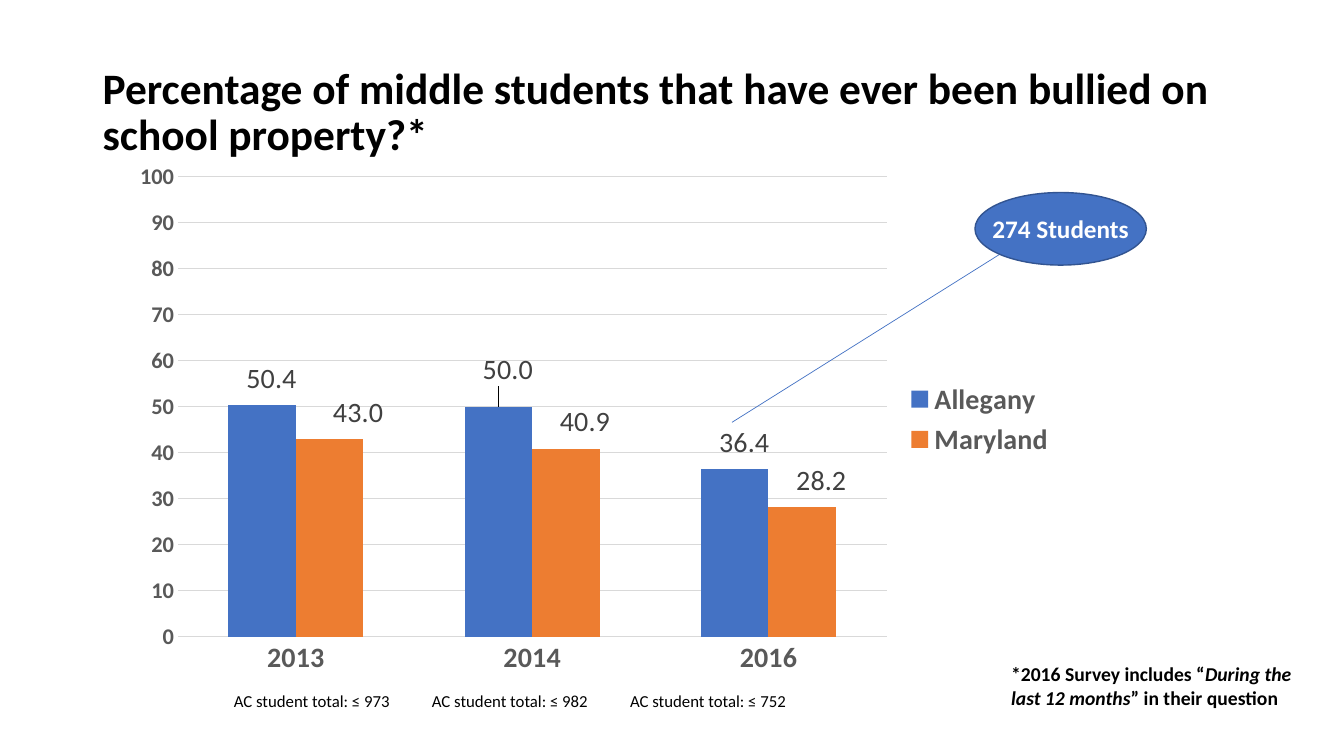
from lxml import etree
from pptx import Presentation, util as u
from pptx.chart.data import CategoryChartData
from pptx.dml.color import RGBColor
from pptx.enum import chart as ch, shapes, text
from pptx.oxml.ns import qn

# Content
TITLE = "Percentage of middle students that have ever been bullied on school property?*"
FOOTNOTE = [("*2016 Survey includes “", False), ("During the last 12 months", True),
            ("” in their question", False)]
CALLOUT = "274 Students"
YEARS = ["2013", "2014", "2016"]
TOTALS = [973, 982, 752]

BLACK = RGBColor(0, 0, 0)
WHITE = RGBColor(0xFF, 0xFF, 0xFF)
BLUE = RGBColor(0x44, 0x72, 0xC4)
NAVY = RGBColor(0x32, 0x54, 0x91)
ORANGE = RGBColor(0xED, 0x7D, 0x31)
GREY = RGBColor(0x59, 0x59, 0x59)
DARK = RGBColor(0x40, 0x40, 0x40)
GRID = RGBColor(0xD9, 0xD9, 0xD9)
FONT = "Calibri"

# Name, colour, values, label shifts as shares of the chart
SERIES = [
    ("Allegany", BLUE, [50.4, 50.0, 36.4], [(0.01, -0.01), (0.01, -0.03), (0.01, -0.01)]),
    ("Maryland", ORANGE, [43.0, 40.9, 28.2], [(0.03, -0.01), (0.02, -0.01), (0.02, -0.01)]),
]
PLOT = {"x": 0.067, "y": 0.056, "w": 0.745, "h": 0.842}

prs = Presentation()
prs.slide_width, prs.slide_height = u.Inches(13.33), u.Inches(7.5)
s = prs.slides.add_slide(prs.slide_layouts[6])


def inches(*lengths):
    return [u.Inches(n) for n in lengths]


def style(font, size, color, bold=False, italic=False):
    font.name, font.size, font.bold, font.italic = FONT, u.Pt(size), bold, italic
    font.color.rgb = color


def add_text(box, runs, size, color=BLACK, bold=False, align=text.PP_ALIGN.LEFT,
             anchor=text.MSO_ANCHOR.TOP, spacing=1.0):
    tf = s.shapes.add_textbox(*inches(*box)).text_frame
    tf.word_wrap, tf.vertical_anchor = True, anchor
    p = tf.paragraphs[0]
    p.alignment, p.line_spacing = align, spacing
    for words, italic in ([(runs, False)] if isinstance(runs, str) else runs):
        r = p.add_run()
        r.text = words
        style(r.font, size, color, bold, italic)


def manual_layout(**values):
    layout = etree.Element(qn("c:layout"))
    manual = etree.SubElement(layout, qn("c:manualLayout"))
    for tag, val in values.items():
        etree.SubElement(manual, qn("c:" + tag)).set("val", str(val))
    return layout


# Title and footnote
add_text((0.92, 0.4, 11.5, 1.45), TITLE, 31, bold=True,
         anchor=text.MSO_ANCHOR.MIDDLE, spacing=0.9)
add_text((9.93, 6.52, 3.04, 0.57), FOOTNOTE, 14, bold=True)

# Chart
data = CategoryChartData(number_format="0.0")
data.categories = YEARS
for name, _, values, _ in SERIES:
    data.add_series(name, values)
chart = s.shapes.add_chart(ch.XL_CHART_TYPE.COLUMN_CLUSTERED,
                           *inches(1.13, 1.45, 9.44, 5.42), data).chart
style(chart.font, 10, BLACK)
chart.has_title = False
chart.has_legend = True
chart.legend.position = ch.XL_LEGEND_POSITION.RIGHT
chart.legend.include_in_layout = False
style(chart.legend.font, 20, GREY, True)

for axis, size in ((chart.category_axis, 20), (chart.value_axis, 16)):
    axis.major_tick_mark = axis.minor_tick_mark = ch.XL_TICK_MARK.NONE
    axis.format.line.fill.background()
    style(axis.tick_labels.font, size, GREY, True)
scale = chart.value_axis
scale.minimum_scale, scale.maximum_scale, scale.major_unit = 0, 100, 10
scale.tick_labels.number_format = "0"
scale.tick_labels.number_format_is_linked = False
scale.major_gridlines.format.line.color.rgb = GRID
scale.major_gridlines.format.line.width = u.Pt(0.75)

plot = chart.plots[0]
plot.gap_width, plot.overlap, plot.vary_by_categories = 150, 0, False
for ser, (_, color, _, shifts) in zip(plot.series, SERIES):
    ser.format.fill.solid()
    ser.format.fill.fore_color.rgb = color
    labels = ser.data_labels
    labels.show_value = True
    labels.number_format, labels.number_format_is_linked = "0.0", False
    style(labels.font, 20, DARK)
    for i, (x, y) in enumerate(shifts):
        label = ser.points[i].data_label
        label.position = ch.XL_LABEL_POSITION.OUTSIDE_END
        style(label.font, 20, DARK)
    for dlbl, (x, y) in zip(ser._element.iter(qn("c:dLbl")), shifts):
        dlbl.insert(1, manual_layout(x=x, y=y))

# Fixed inner plot area
area = chart._chartSpace.find(".//" + qn("c:plotArea"))
for old in area.findall(qn("c:layout")):
    area.remove(old)
area.insert(0, manual_layout(layoutTarget="inner", xMode="edge", yMode="edge", **PLOT))

# Callout with its leader line
line = s.shapes.add_connector(shapes.MSO_CONNECTOR.STRAIGHT, *inches(7.26, 4.19, 10, 2.47))
line.line.color.rgb, line.line.width = BLUE, u.Pt(0.5)
etree.SubElement(line._element.spPr, qn("a:effectLst"))
sp = s.shapes.add_shape(shapes.MSO_SHAPE.OVAL, *inches(9.67, 1.91, 1.7, 0.72))
sp.shadow.inherit = False
sp.fill.solid()
sp.fill.fore_color.rgb = BLUE
sp.line.color.rgb, sp.line.width = NAVY, u.Pt(1)
add_text((9.67, 2.07, 1.7, 0.4), CALLOUT, 18, WHITE, True, text.PP_ALIGN.CENTER)

# Student totals under the years
for i, total in enumerate(TOTALS):
    add_text((2.22 + 1.965 * i, 6.8, 1.85, 0.3), f"AC student total: ≤ {total}", 12)

prs.save("out.pptx")
